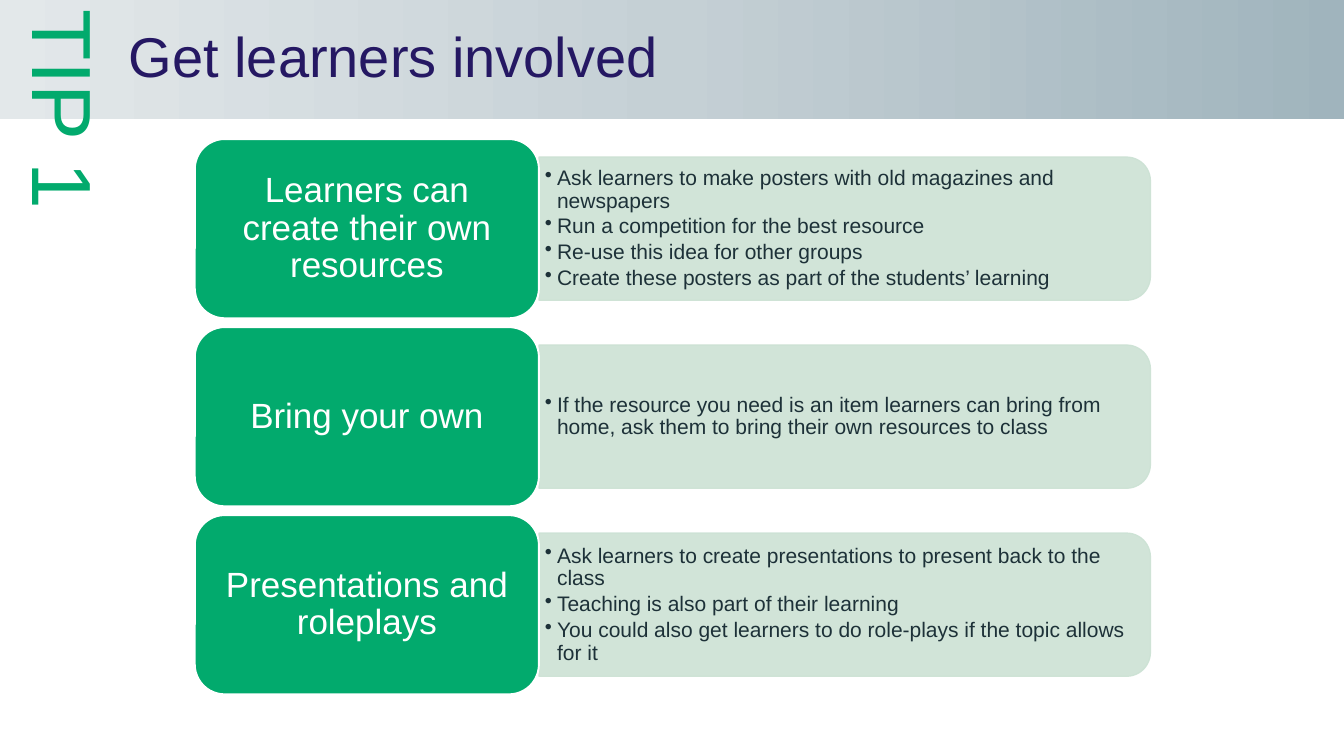
from dataclasses import dataclass

from lxml.etree import SubElement
from pptx import Presentation
from pptx.dml.color import RGBColor
from pptx.enum.shapes import MSO_SHAPE as Preset
from pptx.enum.text import MSO_ANCHOR as Anchor, PP_ALIGN as Align
from pptx.oxml import parse_xml
from pptx.oxml.ns import nsdecls, qn
from pptx.util import Inches, Pt

WIDTH, HEIGHT = Inches(13.33), Inches(7.5)


@dataclass(frozen=True)
class Theme:
    font: str = "Arial"
    green: str = "02AA6D"
    pale_green: str = "CCE2D4"
    white: str = "FFFFFF"
    title_color: str = "251863"
    body_color: str = "1D3138"
    banner_stops: tuple = ((0, "A0B4BD"), (50, "C5D0D5"), (100, "E3E8EA"))
    title_size: int = 40
    tip_size: int = 60
    label_size: int = 25
    body_size: int = 15


THEME = Theme()

# Layout in percent of the slide's width (columns) and height (rows)
BANNER_HEIGHT = 15.73
TIP_WIDTH = 9.08
CARD_LEFT, CARD_WIDTH = 14.5, 25.6
CARD_TOP, CARD_HEIGHT, CARD_PITCH = 18.4, 23.7, 24.87
PANEL_LEFT, PANEL_WIDTH = CARD_LEFT + CARD_WIDTH, 45.5
PANEL_HEIGHT = 0.8 * CARD_HEIGHT
BULLETS_WIDTH, BULLETS_HEIGHT = 45, 0.9 * PANEL_HEIGHT

CARDS = [
    ("Learners can create their own resources", [
        "Ask learners to make posters with old magazines and newspapers",
        "Run a competition for the best resource",
        "Re-use this idea for other groups",
        "Create these posters as part of the students’ learning",
    ]),
    ("Bring your own", [
        "If the resource you need is an item learners can bring from home, "
        "ask them to bring their own resources to class",
    ]),
    ("Presentations and roleplays", [
        "Ask learners to create presentations to present back to the class",
        "Teaching is also part of their learning",
        "You could also get learners to do role-plays if the topic allows for it",
    ]),
]


def share_box(left, top, width, height):
    """Turn percentages of the slide into lengths."""
    return (int(WIDTH * left / 100), int(HEIGHT * top / 100),
            int(WIDTH * width / 100), int(HEIGHT * height / 100))


def write_text(shape, lines, *, size, color, align=Align.LEFT, anchor=Anchor.MIDDLE,
               insets=(0.1, 0.05), indent=0, bullet=None, spacing=0.9, after=0):
    frame = shape.text_frame
    frame.word_wrap = True
    frame.vertical_anchor = anchor
    frame.margin_left = frame.margin_right = Inches(insets[0])
    frame.margin_top = frame.margin_bottom = Inches(insets[1])
    for number, line in enumerate(lines):
        paragraph = frame.add_paragraph() if number else frame.paragraphs[0]
        paragraph.alignment = align
        paragraph.line_spacing = spacing
        paragraph.space_after = Pt(after)
        run = paragraph.add_run()
        run.text = line
        run.font.name = THEME.font
        run.font.size = Pt(size)
        run.font.color.rgb = RGBColor.from_string(color)
        properties = paragraph._p.get_or_add_pPr()
        properties.set("marL", str(Inches(indent)))
        properties.set("indent", str(-Inches(indent) if bullet else 0))
        if bullet:
            SubElement(properties, qn("a:buChar")).set("char", bullet)


def add_box(slide, preset, box, fill=None, line=None, line_width=1):
    shape = slide.shapes.add_shape(preset, *box)
    shape.shadow.inherit = False
    if fill:
        shape.fill.solid()
        shape.fill.fore_color.rgb = RGBColor.from_string(fill)
    if line:
        shape.line.color.rgb = RGBColor.from_string(line)
        shape.line.width = Pt(line_width)
    else:
        shape.line.fill.background()
    return shape


def add_banner(slide, title):
    banner = add_box(slide, Preset.RECTANGLE, share_box(0, 0, 100, BANNER_HEIGHT))
    stops = "".join(f'<a:gs pos="{position * 1000}"><a:srgbClr val="{color}"/></a:gs>'
                    for position, color in THEME.banner_stops)
    gradient = parse_xml(f'<a:gradFill {nsdecls("a")} rotWithShape="1"><a:gsLst>{stops}'
                         '</a:gsLst><a:lin ang="10800000" scaled="0"/></a:gradFill>')
    banner._element.spPr.find(qn("a:prstGeom")).addnext(gradient)
    write_text(banner, [title], size=THEME.title_size, color=THEME.title_color, indent=1.18)


def add_tip(slide, text):
    tip = slide.shapes.add_textbox(*share_box(0, 0, TIP_WIDTH, 100))
    write_text(tip, [text], size=THEME.tip_size, color=THEME.green,
               anchor=Anchor.TOP, spacing=1.0)
    tip.text_frame._txBody.bodyPr.set("vert", "eaVert")


def add_panel(slide, middle):
    """Panel rounded on its right side: a top-rounded shape turned by 90 degrees."""
    left, top, width, height = share_box(PANEL_LEFT, middle - PANEL_HEIGHT / 2,
                                         PANEL_WIDTH, PANEL_HEIGHT)
    shift = (width - height) // 2
    panel = add_box(slide, Preset.ROUND_2_SAME_RECTANGLE,
                    (left + shift, top - shift, height, width),
                    THEME.pale_green, THEME.pale_green, 0.85)
    panel.rotation = 90
    for color in panel._element.spPr.iter(qn("a:srgbClr")):
        SubElement(color, qn("a:alpha")).set("val", "90000")


def add_card(slide, row, label, bullets):
    top = CARD_TOP + row * CARD_PITCH
    middle = top + CARD_HEIGHT / 2
    add_panel(slide, middle)
    details = slide.shapes.add_textbox(*share_box(
        PANEL_LEFT, middle - BULLETS_HEIGHT / 2, BULLETS_WIDTH, BULLETS_HEIGHT))
    write_text(details, bullets, size=THEME.body_size, color=THEME.body_color,
               insets=(0.06, 0.03), indent=0.12, bullet="•", after=2.25)
    card = add_box(slide, Preset.ROUNDED_RECTANGLE,
                   share_box(CARD_LEFT, top, CARD_WIDTH, CARD_HEIGHT),
                   THEME.green, THEME.white, 1.35)
    write_text(card, [label], size=THEME.label_size, color=THEME.white, align=Align.CENTER)


def main():
    presentation = Presentation()
    presentation.slide_width, presentation.slide_height = WIDTH, HEIGHT
    slide = presentation.slides.add_slide(presentation.slide_layouts[6])

    # Heading
    add_banner(slide, "Get learners involved")
    add_tip(slide, "TIP 1")

    # One card per idea
    for row, (label, bullets) in enumerate(CARDS):
        add_card(slide, row, label, bullets)

    presentation.save("out.pptx")


if __name__ == "__main__":
    main()
